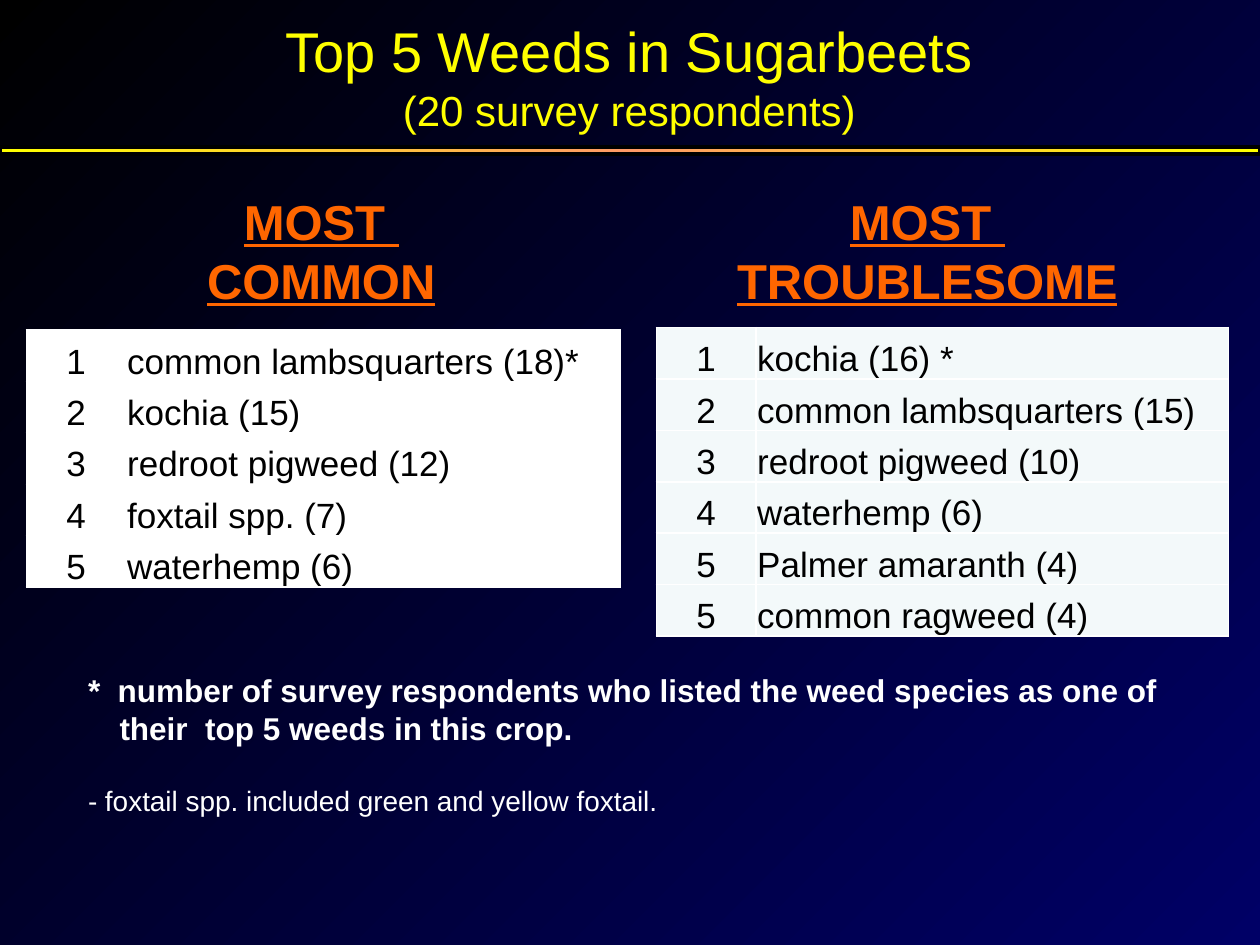
from copy import deepcopy

from lxml.etree import SubElement
from pptx import Presentation
from pptx.dml.color import RGBColor
from pptx.enum.shapes import MSO_SHAPE
from pptx.enum.text import MSO_ANCHOR, PP_ALIGN
from pptx.oxml.ns import qn
from pptx.util import Inches, Pt

deck = Presentation()
deck.slide_width, deck.slide_height = Inches(10), Inches(7.5)
page = deck.slides.add_slide(deck.slide_layouts[6])
color = RGBColor.from_string


def share(left, top, width, height):
    """Turn percentages of the slide's size into lengths."""
    across, down = deck.slide_width / 100, deck.slide_height / 100
    return [int(left * across), int(top * down), int(width * across), int(height * down)]


def write(para, text, size, shade, align=PP_ALIGN.LEFT, **formats):
    para.alignment = align
    span = para.add_run()
    span.text = text
    span.font.color.rgb = color(shade)
    for name, value in {"name": "Arial", "size": Pt(size), **formats}.items():
        setattr(span.font, name, value)


# Background
backdrop = page.background.fill
backdrop.gradient()
backdrop.gradient_angle = 315
for stop, shade in zip(backdrop.gradient_stops, ("000000", "000066")):
    stop.color.rgb = color(shade)

# Column headings
for left, width, words in ((13.5, 24, ("MOST ", "COMMON")),
                           (57.3, 32.6, ("MOST ", "TROUBLESOME"))):
    frame = page.shapes.add_textbox(*share(left, 19.6, width, 13.87)).text_frame
    frame.word_wrap = False
    for index, word in enumerate(words):
        para = frame.add_paragraph() if index else frame.paragraphs[0]
        write(para, word, 28, "FF6600", PP_ALIGN.CENTER, bold=True, underline=True)

# Ranked weeds
common = [("1", "common lambsquarters (18)*"), ("2", "kochia (15)"),
          ("3", "redroot pigweed (12)"), ("4", "foxtail spp. (7)"),
          ("5", "waterhemp (6)")]
troublesome = [("1", "kochia (16) *"), ("2", "common lambsquarters (15)"),
               ("3", "redroot pigweed (10)"), ("4", "waterhemp (6)"),
               ("5", "Palmer amaranth (4)"), ("5", "common ragweed (4)")]
cell_format = {"vertical_anchor": MSO_ANCHOR.BOTTOM, "margin_left": Inches(0.01),
               "margin_right": Inches(0.01), "margin_top": Inches(0.01),
               "margin_bottom": 0}
rank_share, row_share = 7.9, 5.44

for left, top, width, shade, weeds in ((2.1, 34.93, 47.1, "FFFFFF", common),
                                       (52.1, 34.67, 45.4, "F3F9FA", troublesome)):
    area = share(left, top, width, row_share * len(weeds))
    table = page.shapes.add_table(len(weeds), 2, *area).table
    table.first_row = table.horz_banding = False
    table.columns[0].width = share(0, 0, rank_share, 0)[2]
    table.columns[1].width = share(0, 0, width - rank_share, 0)[2]
    for row, entry in enumerate(weeds):
        for column, text in enumerate(entry):
            cell = table.cell(row, column)
            for name, value in cell_format.items():
                setattr(cell, name, value)
            align = PP_ALIGN.LEFT if column else PP_ALIGN.CENTER
            write(cell.text_frame.paragraphs[0], text, 20, "000000", align)
            properties = cell._tc.get_or_add_tcPr()
            for side in ("a:lnL", "a:lnR", "a:lnT", "a:lnB"):
                border = SubElement(properties, qn(side), w=str(Pt(1)))
                paint = SubElement(border, qn("a:solidFill"))
                SubElement(paint, qn("a:srgbClr"), val="FFFFFF")
            cell.fill.solid()
            cell.fill.fore_color.rgb = color(shade)

# Title
frame = page.shapes.add_textbox(*share(3.3, 0, 93.3, 16)).text_frame
frame.word_wrap = True
frame.vertical_anchor = MSO_ANCHOR.MIDDLE
write(frame.paragraphs[0], "Top 5 Weeds in Sugarbeets", 32, "FFFF00", PP_ALIGN.CENTER)
write(frame.add_paragraph(), "(20 survey respondents)", 24, "FFFF00", PP_ALIGN.CENTER)

# Footnotes
frame = page.shapes.add_textbox(*share(6, 70.4, 89.9, 20.67)).text_frame
frame.word_wrap = True
write(frame.paragraphs[0], "*  number of survey respondents who listed the weed species "
      "as one of their  top 5 weeds in this crop.", 18, "FFFFFF", bold=True)
write(frame.add_paragraph(), "- foxtail spp. included green and yellow foxtail.",
      16, "FFFFFF", bold=False)
frame.paragraphs[1].space_before = Pt(21)
for para, indent in zip(frame.paragraphs, (0.25, 0.12)):
    hanging = para._p.get_or_add_pPr()
    hanging.set("marL", str(Inches(indent)))
    hanging.set("indent", str(-Inches(indent)))

# Rule under the title
rule = page.shapes.add_shape(MSO_SHAPE.RECTANGLE, *share(0, 15.6, 100, 0.67))
rule.shadow.inherit = False
rule.line.color.rgb = color("000000")
rule.line.width = Pt(2.25)
rule.fill.gradient()
rule.fill.gradient_angle = 0
stop_list = rule.fill._fill._gradFill.gsLst
stop_list.append(deepcopy(stop_list[-1]))
for stop, position, shade in zip(rule.fill.gradient_stops, (0, 0.5, 1),
                                 ("FFFF00", "FF9966", "FFFF00")):
    stop.position = position
    stop.color.rgb = color(shade)

deck.save("out.pptx")
